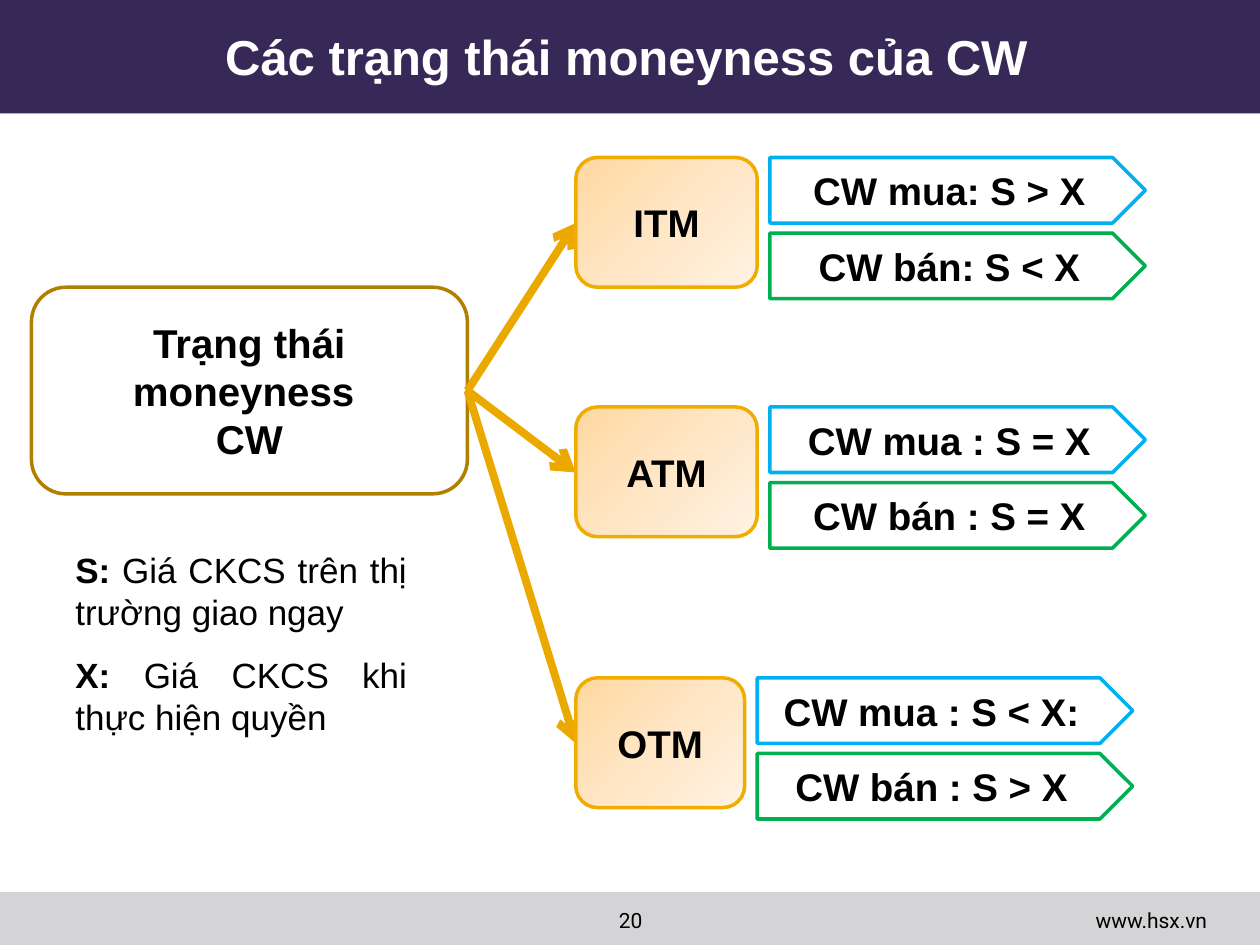
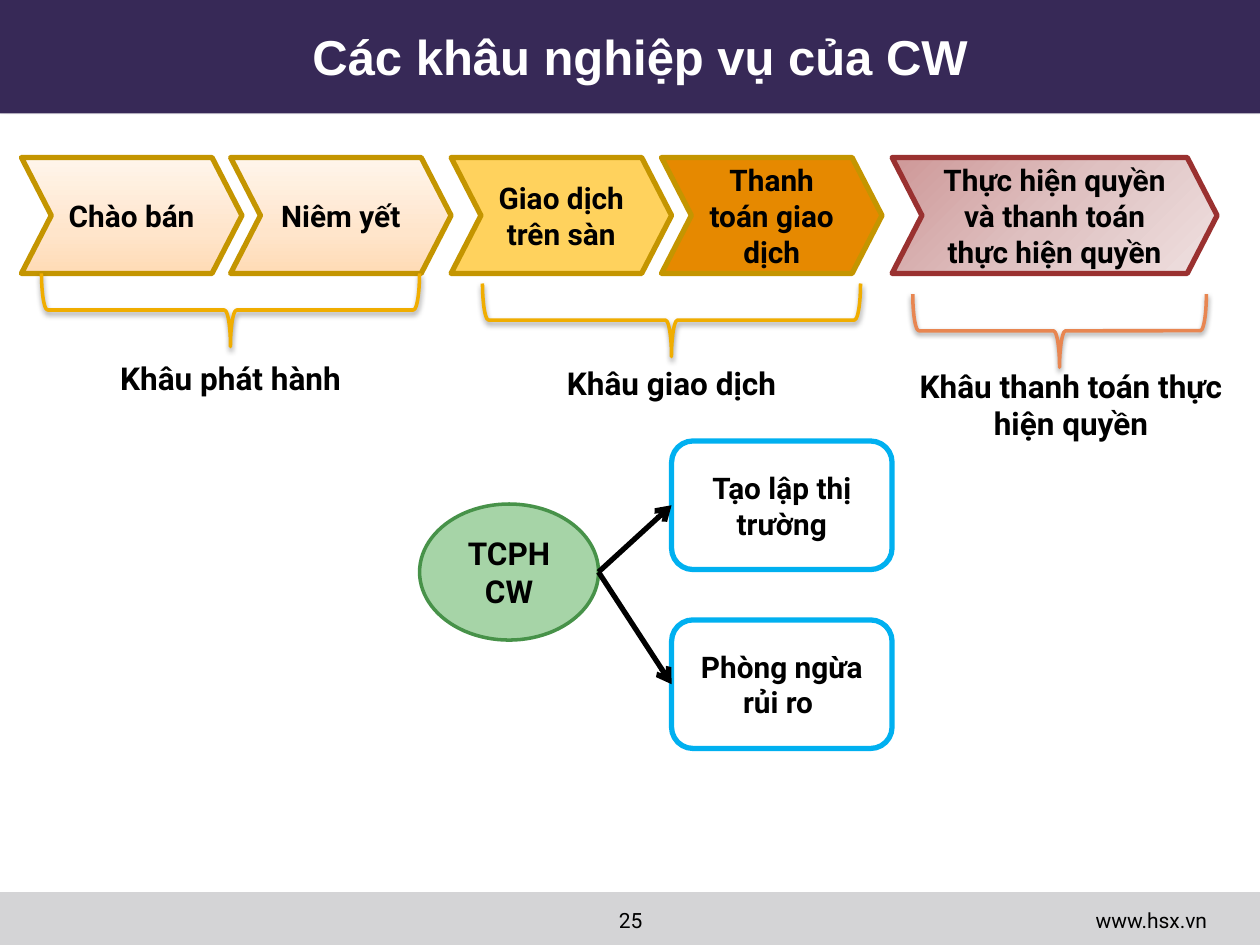
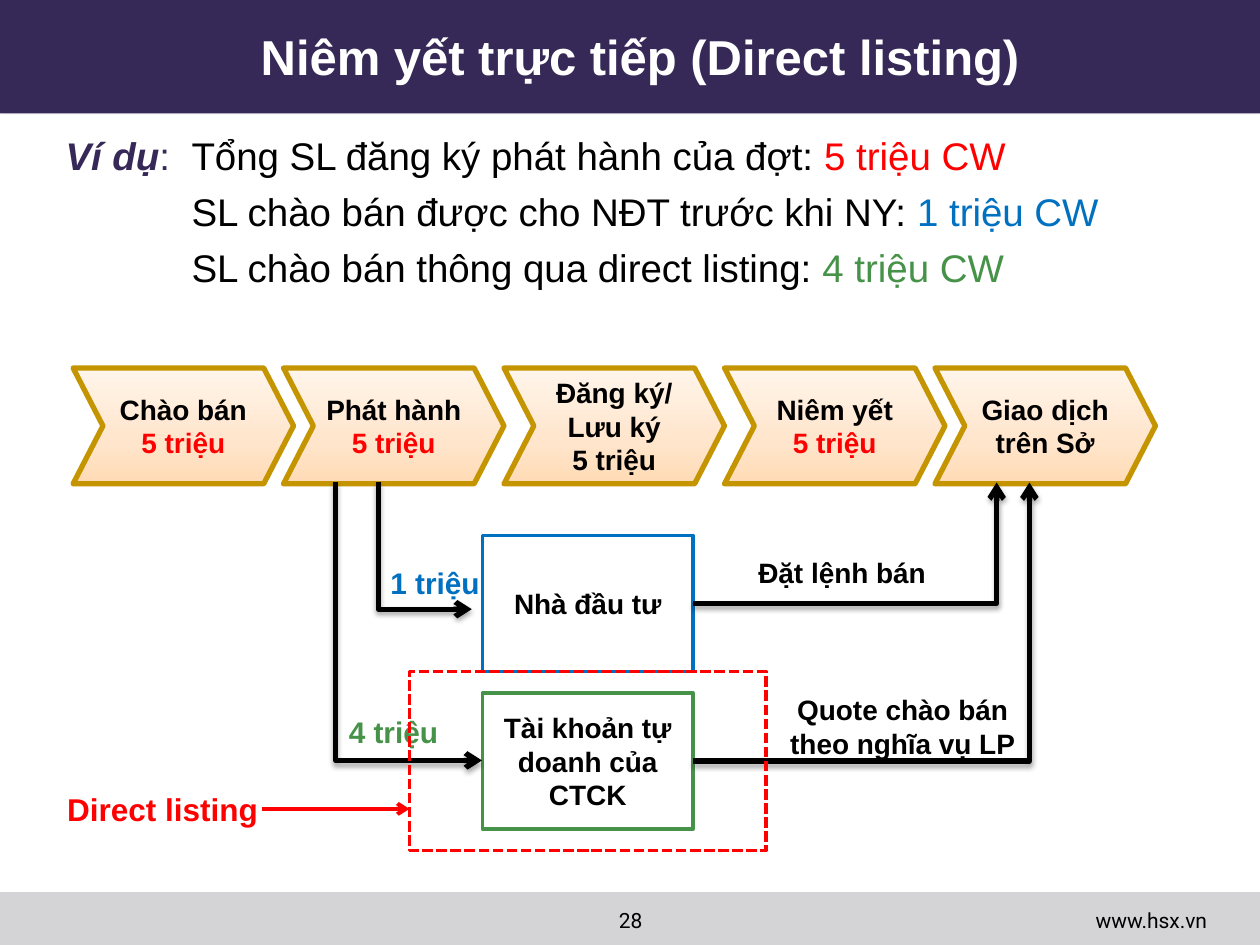
"""Build three slides on covered warrants: moneyness, operations and direct listing."""
from lxml import etree
from pptx import Presentation
from pptx import util as u
from pptx.dml.color import RGBColor
from pptx.enum import dml, shapes, text
from pptx.oxml.ns import qn

SCALE = 9144
WHITE = RGBColor(0xFF, 0xFF, 0xFF)
BLACK = RGBColor(0x00, 0x00, 0x00)
NAVY = RGBColor(0x37, 0x29, 0x57)
SILVER = RGBColor(0xD4, 0xD4, 0xD6)
AMBER = RGBColor(0xF0, 0xAD, 0x00)
DARK_AMBER = RGBColor(0xB2, 0x80, 0x00)
ARROW_AMBER = RGBColor(0xEB, 0xA9, 0x00)
GOLD = RGBColor(0xC4, 0x95, 0x00)
YELLOW = RGBColor(0xFF, 0xD2, 0x5D)
ORANGE = RGBColor(0xE6, 0x89, 0x00)
CORAL = RGBColor(0xE8, 0x86, 0x51)
MAROON = RGBColor(0x9A, 0x31, 0x30)
SKY = RGBColor(0x00, 0xB0, 0xF0)
BLUE = RGBColor(0x00, 0x70, 0xC0)
GREEN = RGBColor(0x00, 0xB0, 0x50)
LEAF = RGBColor(0x47, 0x92, 0x49)
MINT = RGBColor(0xA6, 0xD4, 0xA7)
RED = RGBColor(0xFF, 0x00, 0x00)
PEACH = (270, ((0, "FFDBB5"), (35, "FFE5CB"), (100, "FFF5EB")))
APRICOT = (45, ((0, "FFD8A0"), (50, "FFE6C5"), (100, "FFF2E3")))
ROSE = (45, ((0, "CE9898"), (50, "DFC1C1"), (100, "EFE1E1")))
KIND = shapes.MSO_SHAPE
ALIGN = text.PP_ALIGN
ANCHOR = text.MSO_ANCHOR


def px(*lengths):
    """Turn lengths in px into EMU."""
    return [u.Emu(length * SCALE) for length in lengths]


def child(parent, tag, **attributes):
    """Append a drawing element with the given attributes."""
    return etree.SubElement(parent, qn(tag), {k: str(v) for k, v in attributes.items()})


def add_shadow(effects, alpha, blur, distance, angle):
    """Put a black outer shadow into an effect list."""
    shadow = child(effects, "a:outerShdw", blurRad=int(blur * 12700),
                   dist=int(distance * 12700), dir=angle * 60000, rotWithShape=0)
    child(child(shadow, "a:srgbClr", val=BLACK), "a:alpha", val=alpha * 1000)


def write(frame, *lines, size=16, font="Arial", color=BLACK, bold=False,
          align=ALIGN.CENTER, anchor=ANCHOR.MIDDLE, before=0):
    """Fill a frame with lines, each a string or a list of (words, format) spans."""
    frame.word_wrap = True
    frame.auto_size = text.MSO_AUTO_SIZE.NONE
    frame.vertical_anchor = anchor
    for number, line in enumerate(lines):
        para = frame.add_paragraph() if number else frame.paragraphs[0]
        para.alignment = align
        para.space_before = u.Pt(before if number else 0)
        for words, style in [(line, {})] if isinstance(line, str) else line:
            span = para.add_run()
            span.text = words
            span.font.name = font
            span.font.size = u.Pt(size)
            span.font.bold = style.get("bold", bold)
            span.font.italic = style.get("italic", False)
            span.font.color.rgb = style.get("color", color)


class Deck:
    """Hold the shared style and the current page."""

    def __init__(self):
        """Open an empty deck of 1000 by 750 px."""
        self.deck = Presentation()
        self.deck.slide_width, self.deck.slide_height = px(1000, 750)

    def start(self, title, number, layout=5, title_left=58):
        """Start a page with its bands, title and footer."""
        self.page = self.deck.slides.add_slide(self.deck.slide_layouts[layout])
        header = self.shape(KIND.RECTANGLE, 0, 0, 1000, 90, fill=NAVY, shadow=(40, 4, 3, 270))
        footer = self.shape(KIND.RECTANGLE, 0, 708, 1000, 42, fill=SILVER)
        for band in (footer, header):
            self.page.shapes._spTree.insert(2, band._element)
        box = self.place(self.page.shapes.title, title_left, 13, 900, 62)
        write(box.text_frame, title, size=28, color=WHITE, bold=True)
        small = dict(size=12, font="Roboto", bold=False, anchor=ANCHOR.TOP)
        self.label(417, 715, 167, 35, number, **small)
        self.label(735, 715, 233, 34, "www.hsx.vn", align=ALIGN.RIGHT, **small)

    def place(self, box, *frame):
        """Move and size a placeholder."""
        box.left, box.top, box.width, box.height = px(*frame)
        return box

    def label(self, left, top, width, height, *lines, bold=True, **style):
        """Add a text box."""
        box = self.page.shapes.add_textbox(*px(left, top, width, height))
        write(box.text_frame, *lines, bold=bold, **style)

    def shape(self, kind, left, top, width, height, *lines, fill=None, line=None,
              weight=2, dash=None, shadow=None, **style):
        """Add a preset shape with an optional fill, outline, shadow and text."""
        box = self.page.shapes.add_shape(kind, *px(left, top, width, height))
        box.shadow.inherit = False
        if shadow:
            add_shadow(box._element.spPr.find(qn("a:effectLst")), *shadow)
        if fill is None:
            box.fill.background()
        elif isinstance(fill, RGBColor):
            box.fill.solid()
            box.fill.fore_color.rgb = fill
        else:
            self.gradient(box, *fill)
        if line is None:
            box.line.fill.background()
        else:
            box.line.color.rgb = line
            box.line.width = u.Pt(weight)
            if dash:
                box.line.dash_style = dash
        if lines:
            write(box.text_frame, *lines, bold=True, **style)
        return box

    def gradient(self, box, angle, stops):
        """Give a shape a linear gradient, its angle measured clockwise."""
        box.fill.gradient()
        box.fill.gradient_angle = 360 - angle
        ramp = box._element.spPr.find(".//" + qn("a:gsLst"))
        for stop in list(ramp):
            ramp.remove(stop)
        for position, color in stops:
            child(child(ramp, "a:gs", pos=position * 1000), "a:srgbClr", val=color)

    def chevron(self, left, top, *lines, width=175, fill=PEACH, line=GOLD, **style):
        """Add one step of a process."""
        step = self.shape(KIND.CHEVRON, left, top, width, 92, *lines,
                          fill=fill, line=line, weight=3, **style)
        step.adjustments[0] = 0.258

    def brace(self, left, top, span, line):
        """Add a brace that opens upwards, placed by its visible corner."""
        depth = 58
        shift = (span - depth) // 2
        box = self.shape(KIND.LEFT_BRACE, left + shift, top - shift, depth, span,
                         line=line, shadow=(38, 3.1, 1.6, 90))
        box.rotation = 270

    def arrow(self, start, end, color=BLACK, weight=3.0, kind=shapes.MSO_CONNECTOR.STRAIGHT,
              shadow=None):
        """Add an arrow from start to end."""
        link = self.page.shapes.add_connector(kind, *px(*start, *end))
        link.line.color.rgb = color
        link.line.width = u.Pt(weight)
        properties = link._element.spPr
        child(properties.find(qn("a:ln")), "a:tailEnd", type="arrow")
        effects = child(properties, "a:effectLst")
        if shadow:
            add_shadow(effects, *shadow)
        return properties

    def elbow(self, start, end):
        """Add an arrow with one bend: down then right, or right then up."""
        (x1, y1), (x2, y2) = start, end
        down = y2 > y1
        if down:
            across, drop = x2 - x1, y2 - y1
            start = (x1 + x2 - drop) // 2, (y1 + y2 - across) // 2
            end = start[0] + drop, start[1] + across
        properties = self.arrow(start, end, kind=shapes.MSO_CONNECTOR.ELBOW,
                                shadow=(35, 3.1, 1.8, 90))
        properties.find(qn("a:prstGeom")).set("prst", "bentConnector2")
        if down:
            frame = properties.find(qn("a:xfrm"))
            frame.set("rot", str(270 * 60000))
            frame.set("flipH", "1")


def moneyness(deck):
    """Show the three states of moneyness."""
    deck.start("Các trạng thái moneyness của CW", "20", title_left=47)
    deck.shape(KIND.ROUNDED_RECTANGLE, 25, 228, 346, 164, "Trạng thái moneyness ", "CW",
               line=DARK_AMBER, size=23)
    states = (
        ("ITM", 125, 144, 177, "CW mua: S > X", "CW bán: S < X"),
        ("ATM", 323, 144, 375, "CW mua : S = X", "CW bán : S = X"),
        ("OTM", 538, 134, 590, "CW mua : S < X: ", "CW bán : S > X "),
    )
    for state, top, width, target, call, put in states:
        deck.arrow((371, 310), (457, target), ARROW_AMBER, 4.5)
        deck.shape(KIND.ROUNDED_RECTANGLE, 457, top, width, 103, state,
                   fill=APRICOT, line=AMBER, size=22)
        for row, (rule, color) in enumerate(((call, SKY), (put, GREEN))):
            deck.shape(KIND.PENTAGON, 467 + width, top + row * 60, 298, 52, rule,
                       line=color, size=22)
    strong = {"bold": True}
    deck.label(50, 430, 283, 162,
               [("S: ", strong), ("Giá CKCS trên thị trường giao ngay", {})],
               [("X: ", strong), ("Giá CKCS khi thực hiện quyền", {})],
               size=20, bold=False, align=ALIGN.JUSTIFY, anchor=ANCHOR.TOP, before=12)


def operations(deck):
    """Show the stages of a covered warrant and the issuer's duties."""
    deck.start("Các khâu nghiệp vụ của CW", "25")
    steps = (
        (17, 175, "Chào bán", PEACH, GOLD),
        (183, 175, "Niêm yết", PEACH, GOLD),
        (358, 175, "Giao dịch trên sàn", YELLOW, GOLD),
        (525, 175, "Thanh toán giao dịch", ORANGE, GOLD),
        (708, 258, "Thực hiện quyền và thanh toán thực hiện quyền", ROSE, MAROON),
    )
    for left, width, name, fill, line in steps:
        deck.chevron(left, 125, name, width=width, fill=fill, line=line, size=17, font="Roboto")
    stages = (
        ("Khâu phát hành", 33, 217, 300, AMBER, 33, 275, 50),
        ("Khâu giao dịch", 383, 225, 300, AMBER, 383, 275, 58),
        ("Khâu thanh toán thực hiện quyền", 725, 233, 233, CORAL, 700, 292, 58),
    )
    for name, brace_left, brace_top, span, color, left, top, height in stages:
        deck.brace(brace_left, brace_top, span, color)
        deck.label(left, top, 300, height, name, size=18, font="Roboto")
    deck.shape(KIND.OVAL, 333, 400, 142, 108, "TCPH", "CW",
               fill=MINT, line=LEAF, size=18, font="Roboto")
    duties = (
        (KIND.FLOWCHART_ALTERNATE_PROCESS, 350, "Tạo lập thị trường"),
        (KIND.ROUNDED_RECTANGLE, 492, "Phòng ngừa rủi ro "),
    )
    for kind, top, duty in duties:
        deck.shape(kind, 533, top, 175, 102, duty, line=SKY, weight=3, size=17, font="Roboto")
        deck.arrow((475, 454), (533, top + 51))


def direct_listing(deck):
    """Show an example of direct listing."""
    deck.start("Niêm yết trực tiếp (Direct listing)", "28", layout=1)
    box = deck.place(deck.page.placeholders[1], 42, 100, 917, 572)
    write(box.text_frame,
          [("Ví dụ", {"color": NAVY, "bold": True, "italic": True}), (":\t", {"color": NAVY}),
           ("Tổng SL đăng ký phát hành của đợt: ", {}), ("5 triệu CW", {"color": RED})],
          [("SL chào bán được cho NĐT trước khi NY: ", {}), ("1 triệu CW", {"color": BLUE})],
          [("SL chào bán thông qua direct listing: ", {}), ("4 triệu CW", {"color": LEAF})],
          size=22, align=ALIGN.LEFT, anchor=ANCHOR.TOP, before=5.5)
    margin = px(100)[0]
    for number, para in enumerate(box.text_frame.paragraphs):
        properties = para._p.get_or_add_pPr()
        properties.set("marL", str(margin))
        properties.set("indent", str(0 if number else -margin))
        child(properties, "a:buNone")

    amount = ("5 triệu", {"color": RED})
    steps = (
        (58, [[("Chào bán ", {}), amount]]),
        (225, ["Phát hành", [amount]]),
        (400, ["Đăng ký/", "Lưu ký", "5 triệu"]),
        (575, [[("Niêm yết ", {}), amount]]),
        (742, ["Giao dịch trên Sở"]),
    )
    for left, lines in steps:
        deck.chevron(left, 292, *lines)

    deck.shape(KIND.RECTANGLE, 383, 425, 167, 108, "Nhà đầu tư", line=BLUE)
    deck.shape(KIND.RECTANGLE, 383, 550, 167, 108, "Tài khoản tự doanh của CTCK", line=LEAF)
    deck.label(300, 425, 133, 75, "1 triệu", size=17, color=BLUE, align=ALIGN.LEFT)
    deck.label(267, 558, 133, 46, "4 triệu", size=17, color=LEAF, align=ALIGN.LEFT)
    deck.label(592, 417, 242, 75, "Đặt lệnh bán", align=ALIGN.LEFT)
    deck.label(600, 539, 233, 75, "Quote chào bán theo nghĩa vụ LP")
    routes = (
        ((301, 383), (375, 484)),
        ((550, 479), (791, 383)),
        ((267, 383), (383, 604)),
        ((550, 604), (817, 383)),
    )
    for start, end in routes:
        deck.elbow(start, end)

    deck.shape(KIND.RECTANGLE, 325, 533, 283, 142, line=RED, dash=dml.MSO_LINE.SQUARE_DOT)
    deck.label(33, 617, 192, 50, "Direct listing", size=18, color=RED)
    deck.arrow((208, 642), (325, 642), RED, 2.25)


def main():
    """Build the pages and save the deck."""
    deck = Deck()
    for build in (moneyness, operations, direct_listing):
        build(deck)
    deck.deck.save("out.pptx")


if __name__ == "__main__":
    main()
